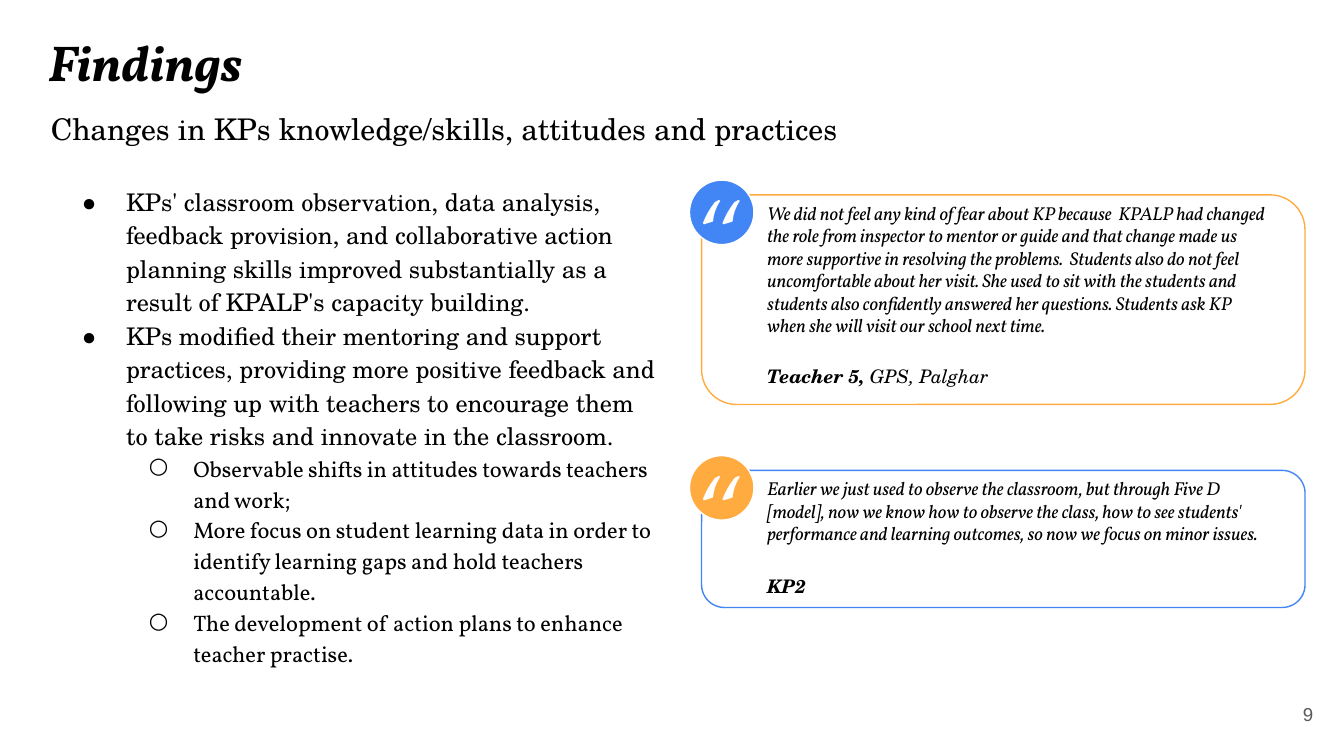
from lxml import etree
from pptx import Presentation
from pptx.dml.color import RGBColor
from pptx.enum.shapes import MSO_SHAPE
from pptx.enum.text import MSO_ANCHOR, PP_ALIGN
from pptx.oxml.ns import qn
from pptx.util import Pt

ROUND = MSO_SHAPE.ROUNDED_RECTANGLE
OVAL = MSO_SHAPE.OVAL
TOP, MIDDLE = MSO_ANCHOR.TOP, MSO_ANCHOR.MIDDLE
LEFT, RIGHT = PP_ALIGN.LEFT, PP_ALIGN.RIGHT

BLACK = RGBColor(0x00, 0x00, 0x00)
WHITE = RGBColor(0xFF, 0xFF, 0xFF)
GRAY = RGBColor(0x59, 0x59, 0x59)
BLUE = RGBColor(0x42, 0x85, 0xF4)
AMBER = RGBColor(0xFF, 0xAB, 0x40)

SCHOLA, VOLLKORN, PAGELLA = "TeX Gyre Schola", "Vollkorn", "TeX Gyre Pagella"
SCALE = 9144

POINTS = [
    (0, "KPs' classroom observation, data analysis, feedback provision, and "
        "collaborative action planning skills improved substantially as a "
        "result of KPALP's capacity building."),
    (0, "KPs modified their mentoring and support practices, providing more "
        "positive feedback and following up with teachers to encourage them "
        "to take risks and innovate in the classroom."),
    (1, "Observable shifts in attitudes towards teachers and work;"),
    (1, "More focus on student learning data in order to identify learning "
        "gaps and hold teachers accountable."),
    (1, "The development of action plans to enhance teacher practise."),
]
LEVELS = [("●", 50, 34, 13, SCHOLA), ("○", 100, 33, 12, VOLLKORN)]

FEAR = (
    "We did not feel any kind of fear about KP because  KPALP had changed the "
    "role from inspector to mentor or guide and that change made us more "
    "supportive in resolving the problems.  Students also do not feel "
    "uncomfortable about her visit. She used to sit with the students and "
    "students also confidently answered her questions. Students ask KP when "
    "she will visit our school next time."
)
MODEL = (
    "Earlier we just used to observe the classroom, but through Five D "
    "[model], now we know how to observe the class, how to see students' "
    "performance and learning outcomes, so now we focus on minor issues."
)


def px(n):
    return n * SCALE


def style(para, size, face, color=BLACK, bold=False, italic=False):
    font = para.font
    font.size, font.name = Pt(size), face
    font.bold, font.italic = bold, italic
    font.color.rgb = color


def frame(slide, box, anchor=TOP):
    body = slide.shapes.add_textbox(*map(px, box)).text_frame
    body.word_wrap = True
    body.vertical_anchor = anchor
    body.margin_left = body.margin_right = px(10)
    body.margin_top = body.margin_bottom = px(10)
    return body


def label(slide, box, text, size, face, color=BLACK, bold=False, italic=False,
          align=LEFT, anchor=TOP):
    para = frame(slide, box, anchor).paragraphs[0]
    para.text = text
    para.alignment = align
    style(para, size, face, color, bold, italic)


def bullet(para, sign, left, hang, face):
    props = para._p.get_or_add_pPr()
    props.set("marL", str(px(left)))
    props.set("indent", str(-px(hang)))
    tint = etree.SubElement(props, qn("a:buClr"))
    etree.SubElement(tint, qn("a:srgbClr"), val=str(BLACK))
    etree.SubElement(props, qn("a:buFont"), typeface=face)
    etree.SubElement(props, qn("a:buChar"), char=sign)


def shape(slide, kind, box, fill, line):
    item = slide.shapes.add_shape(kind, *map(px, box))
    item.shadow.inherit = False
    item.fill.solid()
    item.fill.fore_color.rgb = fill
    item.line.color.rgb = line
    item.line.width = Pt(0.75)


def header(slide, box):
    x, y, w, h = box
    label(slide, (x, y, 454, 63), "Findings", 27, VOLLKORN, bold=True, italic=True)
    label(slide, (x + 2, y + h - 43, w - 2, 43),
          "Changes in KPs knowledge/skills, attitudes and practices", 16, SCHOLA)


def points(slide, box):
    body = frame(slide, box)
    for i, (level, text) in enumerate(POINTS):
        para = body.add_paragraph() if i else body.paragraphs[0]
        sign, left, hang, size, face = LEVELS[level]
        para.text = text
        para.level = level
        para.line_spacing = 1.15
        bullet(para, sign, left, hang, face)
        style(para, size, face)


def quote(slide, box, text, who, place, sign, line, dot):
    x, y, w, h = box
    shape(slide, ROUND, box, WHITE, line)
    shape(slide, OVAL, (x - 9, y - 11, 48, 48), dot, WHITE)
    deep = h - 18 if place else h - 14
    label(slide, (x + 39, y - 5, w - 58, deep), text, 10, VOLLKORN, italic=True)
    label(slide, (x - 12, y - 26, 53, 63), "“", 50, PAGELLA, WHITE)
    left, top, wide = sign
    para = frame(slide, (x + left, y + top, wide, 37)).paragraphs[0]
    style(para, 10, SCHOLA, bold=True, italic=True)
    para.add_run().text = who
    if place:
        run = para.add_run()
        run.text = place
        run.font.bold = False


def footer(slide, box):
    label(slide, box, "9", 10, "Arial", GRAY, align=RIGHT, anchor=MIDDLE)


def main():
    deck = Presentation()
    deck.slide_width = px(1000)
    deck.slide_height = px(1000) * 9 // 16
    slide = deck.slides.add_slide(deck.slide_layouts[6])
    footer(slide, (927, 510, 60, 43))
    header(slide, (26, 13, 934, 102))
    points(slide, (34, 126, 466, 419))
    quote(slide, (522, 145, 449, 156), FEAR, "Teacher 5,", " GPS, Palghar",
          (39, 118, 195), AMBER, BLUE)
    quote(slide, (522, 350, 449, 102), MODEL, "KP2", "",
          (39, 69, 53), BLUE, AMBER)
    deck.save("out.pptx")


if __name__ == "__main__":
    main()
